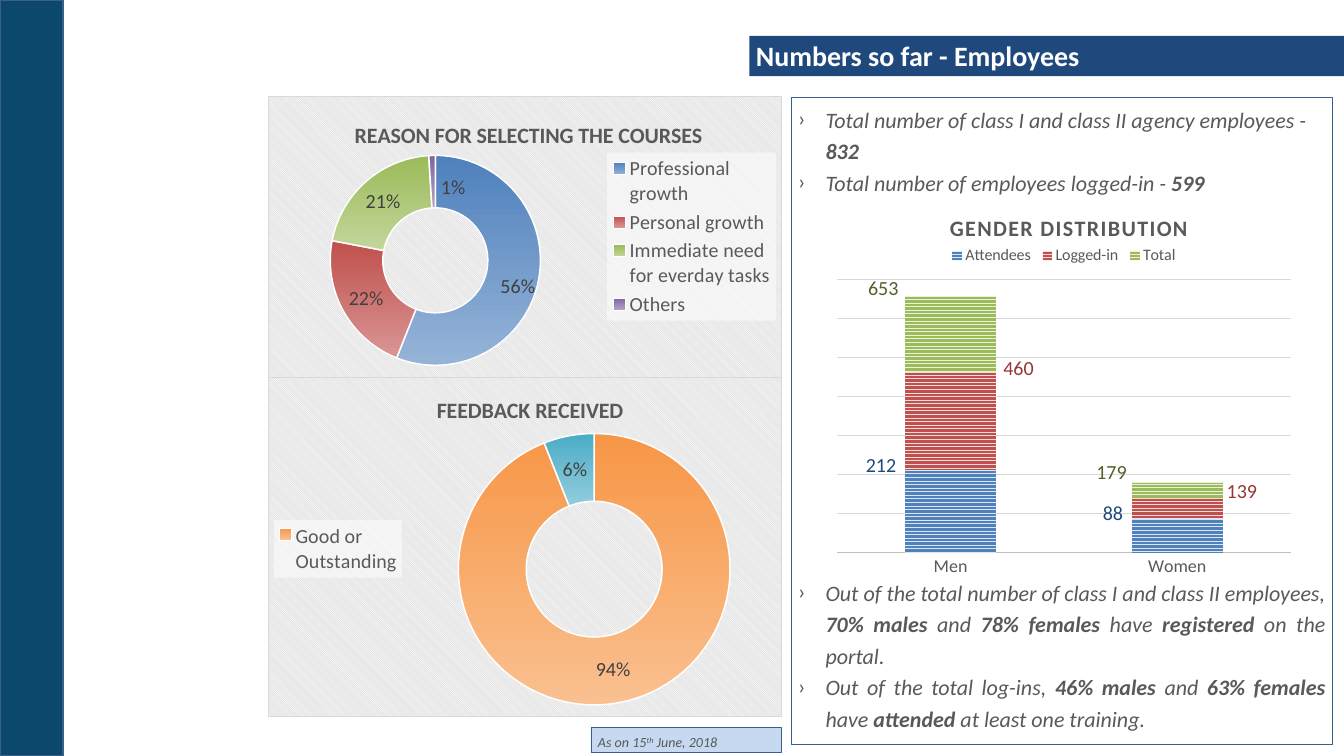
from lxml.etree import SubElement
from pptx import Presentation
from pptx.chart.data import CategoryChartData
from pptx.dml.color import RGBColor
from pptx.enum.chart import XL_CHART_TYPE, XL_LEGEND_POSITION, XL_TICK_LABEL_POSITION, XL_TICK_MARK
from pptx.enum.dml import MSO_PATTERN
from pptx.enum.shapes import MSO_SHAPE
from pptx.enum.text import MSO_ANCHOR, PP_ALIGN
from pptx.oxml import parse_xml
from pptx.oxml.ns import nsdecls, qn
from pptx.util import Cm, Pt

GREY = "595959"
NAVY = "1F497D"
EDGE = "376092"


def colour(value):
    """Return the colour for a hex string."""
    return RGBColor.from_string(value)


def style_font(font, size, value, bold=False, italic=False):
    """Apply the slide's typeface with a size, colour and emphasis."""
    font.name = "Calibri"
    font.size = Pt(size)
    font.color.rgb = colour(value)
    font.bold = bold
    font.italic = italic


def add_panel(page, place, fill=None, edge=None, width=0.75):
    """Add a rectangle with optional fill and outline."""
    panel = page.shapes.add_shape(MSO_SHAPE.RECTANGLE, *map(Cm, place))
    panel.shadow.inherit = False
    if fill:
        panel.fill.solid()
        panel.fill.fore_color.rgb = colour(fill)
    else:
        panel.fill.background()
    if edge:
        panel.line.color.rgb = colour(edge)
        panel.line.width = Pt(width)
    else:
        panel.line.fill.background()
    panel.text_frame.word_wrap = True
    panel.text_frame.vertical_anchor = MSO_ANCHOR.TOP
    return panel


def write_spans(paragraph, texts, size, value, italic=True):
    """Write alternating plain and bold spans into a paragraph."""
    for index, text in enumerate(texts):
        span = paragraph.add_run()
        span.text = text
        style_font(span.font, size, value, index % 2 == 1, italic)


def add_bullets(panel, bullets):
    """Fill a panel with bulleted paragraphs given as (spans, space before)."""
    frame = panel.text_frame
    for index, (texts, space) in enumerate(bullets):
        paragraph = frame.add_paragraph() if index else frame.paragraphs[0]
        properties = panel.element.xpath(".//a:p")[index].get_or_add_pPr()
        properties.set("marL", str(Cm(0.97)))
        properties.set("indent", str(-Cm(0.97)))
        SubElement(properties, qn("a:buFont"), typeface="Calibri")
        SubElement(properties, qn("a:buChar"), char="›")
        paragraph.alignment = PP_ALIGN.JUSTIFY if index else PP_ALIGN.LEFT
        paragraph.line_spacing = 1.2
        if space:
            paragraph.space_before = Pt(space)
        write_spans(paragraph, texts, 22, GREY)


def add_value_label(page, left, top, text, value):
    """Add a number beside a column segment."""
    box = page.shapes.add_textbox(Cm(left), Cm(top), Cm(2.84), Cm(1.07))
    box.text_frame.word_wrap = True
    box.text_frame.text = text
    style_font(box.text_frame.paragraphs[0].runs[0].font, 20, value)


def set_layout(parent, index, x, y, width=None, height=None, mode="edge"):
    """Give a chart part a manual layout in fractions of the chart."""
    for old in parent.findall(qn("c:layout")):
        parent.remove(old)
    layout = parse_xml(f"<c:layout {nsdecls('c')}><c:manualLayout/></c:layout>")
    manual = layout[0]
    if parent.tag == qn("c:plotArea"):
        SubElement(manual, qn("c:layoutTarget"), val="inner")
    if mode == "edge":
        for name in ("xMode", "yMode"):
            SubElement(manual, qn(f"c:{name}"), val=mode)
    for name, number in zip("xywh", (x, y, width, height)):
        if number is not None:
            SubElement(manual, qn(f"c:{name}"), val=str(number))
    parent.insert(index, layout)


def add_chart(page, kind, place, title, categories, series, layouts, number_format="General"):
    """Add a chart with its title, legend and part layouts."""
    data = CategoryChartData(number_format=number_format)
    data.categories = categories
    for name, values in series:
        data.add_series(name, values)
    chart = page.shapes.add_chart(kind, *map(Cm, place), data).chart
    style_font(chart.font, 20, "000000")
    frame = chart.chart_title.text_frame
    frame.text = title
    style_font(frame.paragraphs[0].runs[0].font, 22, GREY, True)
    chart.has_legend = True
    chart.legend.include_in_layout = False
    for name, index in (("plotArea", 0), ("legend", 1), ("title", 1)):
        set_layout(chart.element.xpath(f".//c:{name}")[0], index, *layouts[name])
    return chart


def add_doughnut(page, place, title, categories, values, gradients, side, layouts):
    """Add a doughnut chart on a hatched ground."""
    chart = add_chart(page, XL_CHART_TYPE.DOUGHNUT, place, title, categories,
                      [("Series 1", values)], layouts, "0%")
    chart.legend.position = side
    style_font(chart.legend.font, 20, GREY)
    chart.element.xpath(".//c:legend/c:overlay")[0].addnext(parse_xml(
        f'<c:spPr {nsdecls("c", "a")}><a:solidFill><a:srgbClr val="FFFFFF">'
        '<a:alpha val="50000"/></a:srgbClr></a:solidFill></c:spPr>'))
    chart.element.find(qn("c:chart")).addnext(parse_xml(
        f'<c:spPr {nsdecls("c", "a")}><a:pattFill prst="dkDnDiag">'
        '<a:fgClr><a:srgbClr val="FFFFFF"/></a:fgClr><a:bgClr><a:srgbClr val="E6E6E6"/></a:bgClr>'
        '</a:pattFill><a:ln w="9525"><a:solidFill><a:srgbClr val="D9D9D9"/></a:solidFill></a:ln></c:spPr>'))
    chart.element.xpath(".//c:holeSize")[0].set("val", "70")
    ring = chart.plots[0].series[0]
    labels = ring.data_labels
    labels.show_value = True
    labels.number_format = "0%"
    labels.number_format_is_linked = False
    style_font(labels.font, 20, "404040")
    for index, ends in enumerate(gradients):
        form = ring.points[index].format
        form.fill.gradient()
        form.fill.gradient_angle = 270
        for stop, value in zip(form.fill.gradient_stops, ends):
            stop.color.rgb = colour(value)
        form.line.color.rgb = colour("FFFFFF")
        form.line.width = Pt(1.5)
    return chart


def shift_label(chart, index, x, y):
    """Move one doughnut label away from its usual place."""
    style_font(chart.plots[0].series[0].points[index].data_label.font, 20, "404040")
    label = chart.element.xpath(f".//c:dLbl[c:idx/@val='{index}']")[0]
    set_layout(label, 1, x, y, mode="factor")


def add_gender_chart(page):
    """Add the stacked columns for men and women."""
    layouts = {"plotArea": (0.02, 0.22, 0.96, 0.7), "legend": (0.25, 0.13, 0.5, 0.06), "title": (0.25, 0.04)}
    series = [("Attendees", (85, 35)), ("Logged-in", (100, 21)), ("Total", (78, 16))]
    chart = add_chart(page, XL_CHART_TYPE.COLUMN_STACKED, (29.21, 6.81, 16.66, 13.79),
                      "GENDER DISTRIBUTION", ("Men", "Women"), series, layouts)
    chart.element.xpath(".//c:title//a:rPr")[0].set("spc", "150")
    chart.legend.position = XL_LEGEND_POSITION.TOP
    style_font(chart.legend.font, 16, GREY)
    plot = chart.plots[0]
    plot.gap_width, plot.overlap, plot.vary_by_categories = 150, 100, False
    for bars, (front, back) in zip(plot.series, (("4F81BD", "DCE6F2"), ("C0504D", "F2DCDB"), ("9BBB59", "EBF1DE"))):
        fill = bars.format.fill
        fill.patterned()
        fill.pattern = MSO_PATTERN.NARROW_HORIZONTAL
        fill.fore_color.rgb = colour(front)
        fill.back_color.rgb = colour(back)
    people = chart.category_axis
    people.major_tick_mark = XL_TICK_MARK.NONE
    style_font(people.tick_labels.font, 18, GREY)
    people.format.line.color.rgb = colour("BFBFBF")
    people.format.line.width = Pt(1.5)
    scale = chart.value_axis
    scale.minimum_scale, scale.maximum_scale, scale.major_unit = 0, 280, 40
    scale.major_tick_mark = XL_TICK_MARK.NONE
    scale.tick_label_position = XL_TICK_LABEL_POSITION.NONE
    scale.format.line.fill.background()
    scale.major_gridlines.format.line.color.rgb = colour("D9D9D9")
    scale.major_gridlines.format.line.width = Pt(0.75)


def main():
    """Build and save the slide."""
    deck = Presentation()
    deck.slide_width, deck.slide_height = Cm(47.42), Cm(26.67)
    page = deck.slides.add_slide(deck.slide_layouts[6])
    add_panel(page, (0, 0, 2.24, 26.67), "0C4869", "3A5F8C", 2)
    banner = add_panel(page, (26.44, 1.27, 20.98, 1.42), NAVY)
    banner.text_frame.text = "Numbers so far - Employees"
    banner.text_frame.paragraphs[0].alignment = PP_ALIGN.LEFT
    banner.text_frame.margin_left = Cm(0.23)
    banner.text_frame.margin_top = Cm(0.1)
    style_font(banner.text_frame.paragraphs[0].runs[0].font, 28, "FFFFFF", True)

    feedback = add_doughnut(
        page, (9.47, 13.31, 18.11, 11.99), "FEEDBACK RECEIVED", ("Good or Outstanding", ""), (0.94, 0.06),
        (("F79646", "FAC090"), ("4BACC6", "93CDDD")), XL_LEGEND_POSITION.LEFT,
        {"plotArea": (0.37, 0.16, 0.53, 0.81), "legend": (0.01, 0.42, 0.25, 0.17), "title": (0.32, 0.04)})
    feedback.element.xpath(".//c:legend")[0].insert(1, parse_xml(
        f'<c:legendEntry {nsdecls("c")}><c:idx val="1"/><c:delete val="1"/></c:legendEntry>'))
    reasons = add_doughnut(
        page, (9.47, 3.38, 18.11, 9.93), "REASON FOR SELECTING THE COURSES",
        ("Professional growth", "Personal growth", "Immediate need for everday tasks", "Others"),
        (0.56, 0.22, 0.21, 0.01),
        (("4F81BD", "95B3D7"), ("C0504D", "D99694"), ("9BBB59", "C3D69B"), ("8064A2", "B3A2C7")),
        XL_LEGEND_POSITION.RIGHT,
        {"plotArea": (0.12, 0.21, 0.41, 0.75), "legend": (0.66, 0.2, 0.33, 0.6), "title": (0.16, 0.07)})
    shift_label(reasons, 0, 0.01, 0.04)
    shift_label(reasons, 3, 0.04, 0.02)

    date = add_panel(page, (20.85, 25.65, 6.71, 0.91), "C6D9F1", EDGE)
    paragraph = date.text_frame.paragraphs[0]
    paragraph.alignment = PP_ALIGN.JUSTIFY
    paragraph.line_spacing = 1.2
    for text in ("As on 15", "th", " June, 2018"):
        write_spans(paragraph, [text], 14, GREY)
    date.element.xpath(".//a:rPr")[1].set("baseline", "30000")

    add_bullets(add_panel(page, (27.91, 3.43, 19.1, 22.83), edge=EDGE), (
        (("Total number of class I and class II agency employees - ", "832"), 0),
        (("Total number of employees logged-in - ", "599"), 0),
        (("Out of the total number of class I and class II employees, ", "70% males ", "and ",
          "78% females ", "have ", "registered", " on the portal."), 378),
        (("Out of the total log-ins, ", "46% males ", "and ", "63% females ", "have ", "attended",
          " at least one training."), 0)))
    add_gender_chart(page)
    for left, top, text, value in (
            (35.15, 12.4, "460", "953735"), (43.03, 16.76, "139", "953735"),
            (30.38, 9.6, "653", "4F6228"), (38.43, 16.1, "179", "4F6228"),
            (38.66, 17.53, "88", NAVY), (30.3, 15.85, "212", NAVY)):
        add_value_label(page, left, top, text, value)
    deck.save("out.pptx")


if __name__ == "__main__":
    main()
